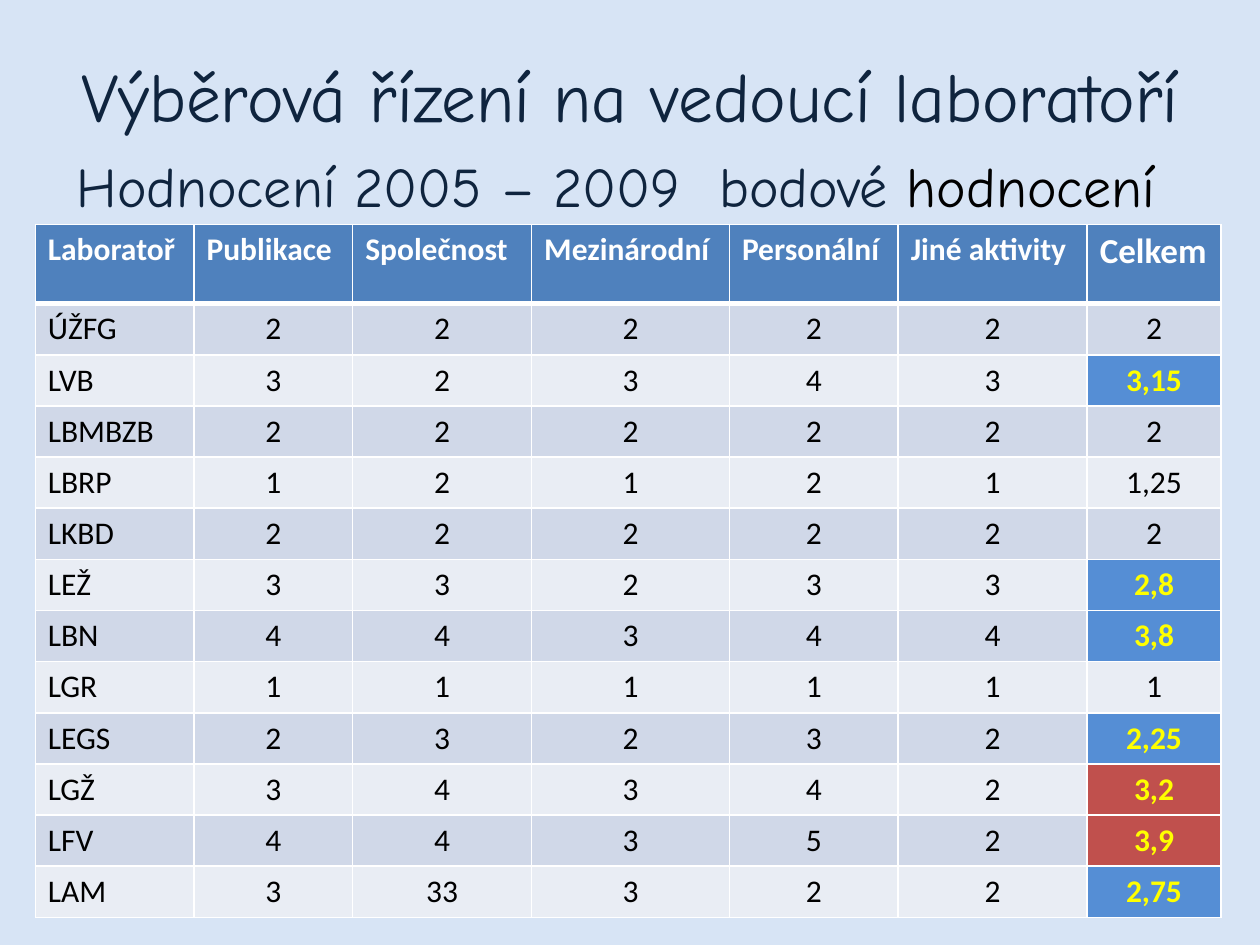
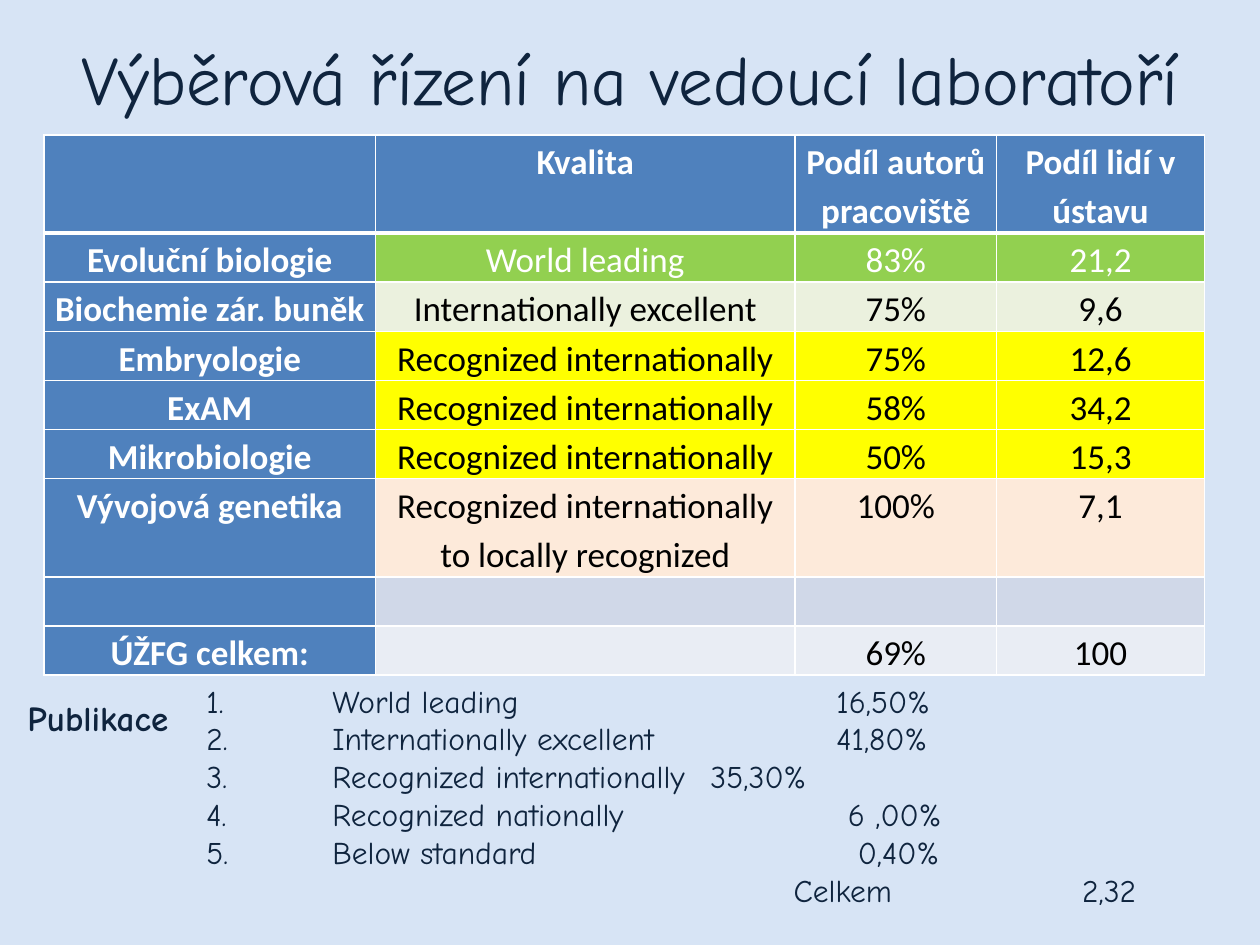
from lxml import etree
from pptx import Presentation
from pptx.dml.color import RGBColor
from pptx.enum.text import MSO_ANCHOR, PP_ALIGN
from pptx.oxml.ns import qn
from pptx.util import Inches, Pt

LEFT, CENTER = PP_ALIGN.LEFT, PP_ALIGN.CENTER
TOP, MIDDLE = MSO_ANCHOR.TOP, MSO_ANCHOR.MIDDLE

SKY = RGBColor(0xD7, 0xE4, 0xF5)
NAVY = RGBColor(0x0F, 0x24, 0x3E)
BLACK = RGBColor(0, 0, 0)
WHITE = RGBColor(255, 255, 255)
HEAD = RGBColor(0x4F, 0x81, 0xBD)
BANDS = (RGBColor(0xD0, 0xD8, 0xE8), RGBColor(0xE9, 0xED, 0xF4))
BLUE = RGBColor(0x55, 0x8E, 0xD5)
RED = RGBColor(0xC0, 0x50, 0x4D)
YELLOW = RGBColor(255, 255, 0)
GREEN = RGBColor(0x92, 0xD0, 0x50)
PALE = RGBColor(0xEB, 0xF1, 0xDE)
PEACH = RGBColor(0xFD, 0xEA, 0xDA)

WIDE, HIGH = 100, 75
UNIT = Inches(0.1)
HAND, PLAIN = "Comic Neue", "Calibri"
TITLE = "Výběrová řízení na vedoucí laboratoří"

LABS = [
    ("Laboratoř", "Publikace", "Společnost", "Mezinárodní", "Personální", "Jiné aktivity", "Celkem"),
    ("ÚŽFG", "2", "2", "2", "2", "2", "2"),
    ("LVB", "3", "2", "3", "4", "3", "3,15"),
    ("LBMBZB", "2", "2", "2", "2", "2", "2"),
    ("LBRP", "1", "2", "1", "2", "1", "1,25"),
    ("LKBD", "2", "2", "2", "2", "2", "2"),
    ("LEŽ", "3", "3", "2", "3", "3", "2,8"),
    ("LBN", "4", "4", "3", "4", "4", "3,8"),
    ("LGR", "1", "1", "1", "1", "1", "1"),
    ("LEGS", "2", "3", "2", "3", "2", "2,25"),
    ("LGŽ", "3", "4", "3", "4", "2", "3,2"),
    ("LFV", "4", "4", "3", "5", "2", "3,9"),
    ("LAM", "3", "33", "3", "2", "2", "2,75"),
]
TOP_LABS = ("LGŽ", "LFV")

FIELDS = [
    ("", "Kvalita", "Podíl autorů pracoviště", "Podíl lidí v ústavu"),
    ("Evoluční biologie", "World leading", "83%", "21,2"),
    ("Biochemie zár. buněk", "Internationally excellent", "75%", "9,6"),
    ("Embryologie", "Recognized internationally", "75%", "12,6"),
    ("ExAM", "Recognized internationally", "58%", "34,2"),
    ("Mikrobiologie", "Recognized internationally", "50%", "15,3"),
    ("Vývojová genetika", "Recognized internationally to locally recognized", "100%", "7,1"),
    ("", "", "", ""),
    ("ÚŽFG celkem:", "", "69%", "100"),
]
FIELD_FILLS = (HEAD, GREEN, PALE, YELLOW, YELLOW, YELLOW, PEACH) + BANDS

GRADES = [
    ("1.\tWorld leading\t16,50%", (10, 50)),
    ("2.\tInternationally excellent\t41,80%", (10, 50)),
    ("3.\tRecognized internationally\t35,30%", (10, 40)),
    ("4.\tRecognized nationally\t6 ,00%", (10, 50.9)),
    ("5.\tBelow standard\t0,40%", (10, 51.7)),
    ("\tCelkem\t2,32", (46.6, 69.5)),
]


def span(*cells):
    """Turn grid counts into lengths."""
    return [int(n * UNIT) for n in cells]


def style(obj, **values):
    """Set each format value on an object."""
    for name, value in values.items():
        setattr(obj, name, value)


def add_run(para, text, size, color, font=HAND, bold=False):
    """Add a styled run of text."""
    run = para.add_run()
    run.text = text
    style(run.font, name=font, size=Pt(size), bold=bold)
    run.font.color.rgb = color


def add_tabs(para, stops):
    """Give a paragraph left tab stops."""
    tabs = etree.SubElement(para._p.get_or_add_pPr(), qn("a:tabLst"))
    for stop in span(*stops):
        etree.SubElement(tabs, qn("a:tab"), pos=str(stop), algn="l")


def add_box(slide, place, lines, size, align=LEFT, anchor=TOP, wrap=True, bold=False):
    """Add a text box of lines, each with its runs and tab stops."""
    frame = slide.shapes.add_textbox(*span(*place)).text_frame
    style(frame, word_wrap=wrap, vertical_anchor=anchor)
    for i, (runs, stops) in enumerate(lines):
        para = frame.add_paragraph() if i else frame.paragraphs[0]
        para.alignment = align
        if stops:
            add_tabs(para, stops)
        for text, color in runs:
            add_run(para, text, size, color, bold=bold)


def add_edges(cell, row):
    """Draw white cell borders, thick under the head row."""
    for side in "LRTB":
        thick = (row, side) in ((0, "B"), (1, "T"))
        line = etree.SubElement(cell._tc.get_or_add_tcPr(), qn(f"a:ln{side}"),
                                w=str(Pt(3 if thick else 1)))
        fill = etree.SubElement(line, qn("a:solidFill"))
        etree.SubElement(fill, qn("a:srgbClr"), val=str(WHITE))


def add_grid(slide, corner, cols, rows, data, look):
    """Add a table whose cells are styled by a look rule."""
    place = span(*corner, sum(cols), sum(rows))
    table = slide.shapes.add_table(len(rows), len(cols), *place).table
    table.horz_banding = False
    for col, width in zip(table.columns, span(*cols)):
        col.width = width
    for row, height in zip(table.rows, span(*rows)):
        row.height = height
    for r, texts in enumerate(data):
        for c, text in enumerate(texts):
            cell = table.cell(r, c)
            fill, font, layout, inset = look(r, c)
            add_edges(cell, r)
            cell.fill.solid()
            cell.fill.fore_color.rgb = fill
            style(cell, **inset)
            para = cell.text_frame.paragraphs[0]
            style(para, **layout)
            if text:
                add_run(para, text, font=PLAIN, **font)


def lab_look(r, c):
    """Style a cell of the lab scores."""
    last = c == len(LABS[0]) - 1
    fill, color, bold = BANDS[(r - 1) % 2], BLACK, False
    if r == 0:
        fill, color, bold = HEAD, WHITE, True
    elif last and float(LABS[r][c].replace(",", ".")) > 2:
        fill, color, bold = RED if LABS[r][0] in TOP_LABS else BLUE, YELLOW, True
    font = dict(size=20 if last and r == 0 else 18, color=color, bold=bold)
    return fill, font, dict(alignment=CENTER if r and c else LEFT), {}


def field_look(r, c):
    """Style a cell of the field ratings."""
    head = r == 0 or c == 0
    fill = HEAD if head else FIELD_FILLS[r]
    font = dict(size=20, color=WHITE if head or fill == GREEN else BLACK, bold=head)
    layout = dict(alignment=CENTER, line_spacing=1.15)
    side = Inches(0.07)
    return fill, font, layout, dict(margin_left=side, margin_right=side,
                                    margin_top=0, margin_bottom=0)


def add_page(deck, top):
    """Add a slide with its ground and title."""
    slide = deck.slides.add_slide(deck.slide_layouts[6])
    slide.background.fill.solid()
    slide.background.fill.fore_color.rgb = SKY
    add_box(slide, (0, top, WIDE, 12.5), [([(TITLE, NAVY)], ())], 39.6, CENTER, MIDDLE)
    return slide


def add_scores(deck):
    """Build the slide of lab scores."""
    slide = add_page(deck, 1.3)
    runs = [("Hodnocení 2005 – 2009\tbodové ", NAVY), ("hodnocení", BLACK)]
    add_box(slide, (5.1, 11.5, 90, 49.5), [(runs, (51,))], 32)
    add_grid(slide, (2.8, 17.8), (12.6, 12.6, 14.2, 15.7, 13.4, 15, 10.6),
             [6.3] + [4.06] * 12, LABS, lab_look)


def add_fields(deck):
    """Build the slide of field ratings."""
    slide = add_page(deck, -0.1)
    add_grid(slide, (3.5, 10.7), (26.3, 33.3, 16, 16.5),
             [7.8] + [3.9] * 5 + [7.8] + [3.9] * 2, FIELDS, field_look)
    lines = [([(text, NAVY)], stops) for text, stops in GRADES]
    add_box(slide, (15.4, 53.6, 84.6, 19.2), lines, 18)
    add_box(slide, (1.2, 54.8, 14.3, 4.4), [([("Publikace", NAVY)], ())], 20,
            wrap=False, bold=True)


def main():
    """Build and save the deck."""
    deck = Presentation()
    deck.slide_width, deck.slide_height = span(WIDE, HIGH)
    add_scores(deck)
    add_fields(deck)
    deck.save("out.pptx")


if __name__ == "__main__":
    main()
